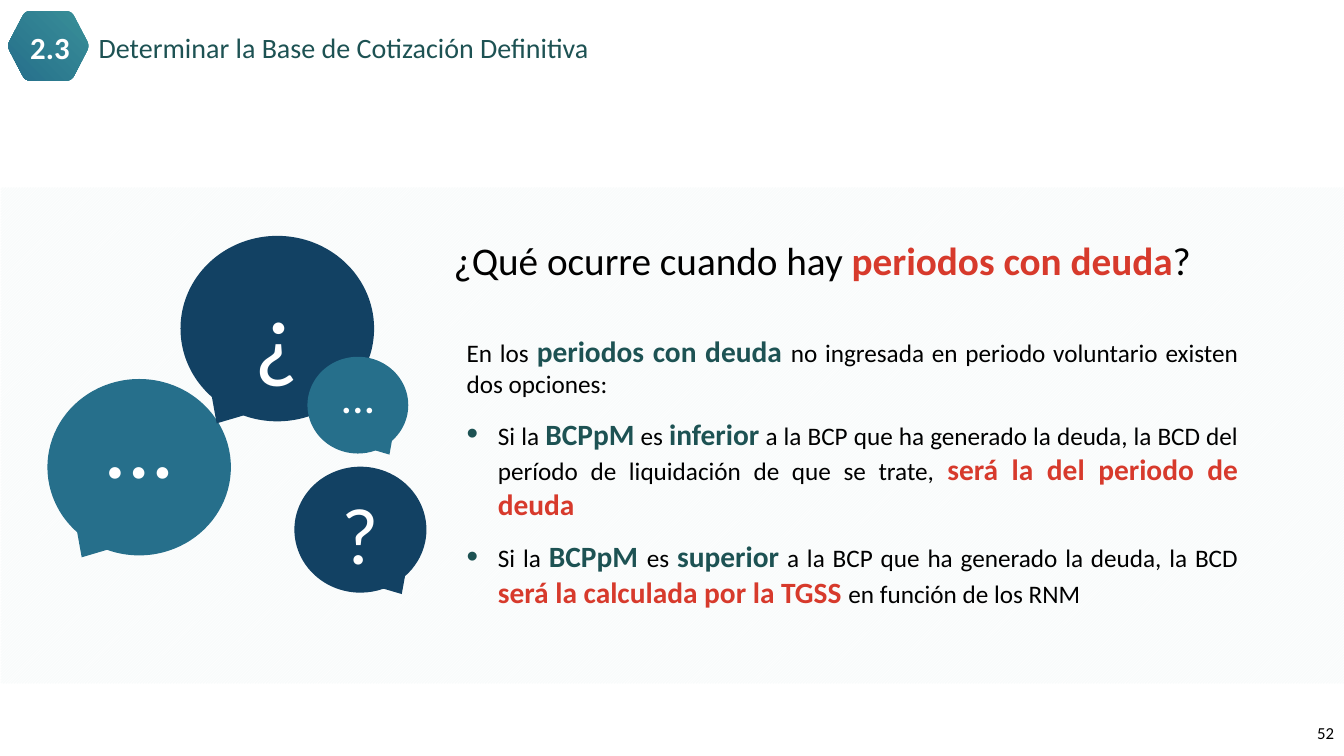
from lxml import etree
from pptx import Presentation
from pptx.dml.color import RGBColor
from pptx.enum.dml import MSO_PATTERN
from pptx.enum.shapes import MSO_SHAPE
from pptx.enum.text import MSO_ANCHOR, PP_ALIGN
from pptx.oxml.ns import qn
from pptx.util import Inches, Pt

BLACK = RGBColor(0x00, 0x00, 0x00)
WHITE = RGBColor(0xFF, 0xFF, 0xFF)
GREEN = RGBColor(0x1D, 0x52, 0x53)
RED = RGBColor(0xD7, 0x3A, 0x2C)
NAVY = RGBColor(0x12, 0x41, 0x63)
TEAL = RGBColor(0x26, 0x6F, 0x8B)
LIGHT_TEAL = RGBColor(0x39, 0x8F, 0x98)
STRIPE = RGBColor(0xE2, 0xED, 0xEE)

DEFAULT_MARGINS = (0.1, 0.05, 0.1, 0.05)
COLOURS = {"plain": BLACK, "key": GREEN, "alert": RED}


def set_frame(shape, margins=DEFAULT_MARGINS, anchor=MSO_ANCHOR.TOP):
    frame = shape.text_frame
    frame.word_wrap = True
    frame.vertical_anchor = anchor
    frame.margin_left, frame.margin_top, frame.margin_right, frame.margin_bottom = map(Inches, margins)
    return frame


def add_bullet(paragraph, indent=0.31):
    properties = paragraph._p.get_or_add_pPr()
    properties.set("marL", str(Inches(indent)))
    properties.set("indent", str(-Inches(indent)))
    colour = etree.SubElement(properties, qn("a:buClr"))
    etree.SubElement(colour, qn("a:srgbClr"), val=str(GREEN))
    etree.SubElement(properties, qn("a:buSzPct"), val="130000")
    etree.SubElement(properties, qn("a:buFont"), typeface="Arial")
    etree.SubElement(properties, qn("a:buChar"), char="•")


def write(paragraph, text, size=18, colour=BLACK, font="Calibri", bold=False,
          align=None, before=0, after=0, line=None):
    if align is not None:
        paragraph.alignment = align
    paragraph.space_before = Pt(before)
    paragraph.space_after = Pt(after)
    if line:
        paragraph.line_spacing = line
    run = paragraph.add_run()
    run.text = text
    run.font.name = font
    run.font.size = Pt(size)
    run.font.bold = bold
    run.font.color.rgb = colour


def write_mixed(paragraph, pieces, plain_size=18, strong_size=21, **layout):
    for text, style in pieces:
        strong = style != "plain"
        write(paragraph, text, size=strong_size if strong else plain_size,
              colour=COLOURS[style], bold=strong, align=PP_ALIGN.JUSTIFY, **layout)


def add_text_box(slide, box, **frame_format):
    return set_frame(slide.shapes.add_textbox(*map(Inches, box)), **frame_format)


def add_striped_band(slide):
    band = slide.shapes.add_shape(
        MSO_SHAPE.RECTANGLE, Inches(0.01), Inches(1.86), Inches(13.32), Inches(4.92))
    band.shadow.inherit = False
    band.line.fill.background()
    band.fill.patterned()
    band.fill.pattern = MSO_PATTERN.DARK_UPWARD_DIAGONAL
    band.fill.fore_color.rgb = STRIPE
    band.fill.back_color.rgb = WHITE
    for colour in band._element.spPr.find(qn("a:pattFill")).iter(qn("a:srgbClr")):
        etree.SubElement(colour, qn("a:alpha"), val="20000")


def add_bubble(slide, box, text, size, colour, tail, margins):
    bubble = slide.shapes.add_shape(MSO_SHAPE.OVAL_CALLOUT, *map(Inches, box))
    bubble.shadow.inherit = False
    bubble.adjustments[0] = tail
    bubble.adjustments[1] = 0.511
    bubble.fill.solid()
    bubble.fill.fore_color.rgb = colour
    bubble.line.fill.background()
    frame = set_frame(bubble, margins=margins, anchor=MSO_ANCHOR.MIDDLE)
    write(frame.paragraphs[0], text, size=size, colour=WHITE, font="Lato", align=PP_ALIGN.CENTER)


def round_corners(corners, cut=0.055, steps=6):
    points = []
    for index, (x, y) in enumerate(corners):
        ends = []
        for other_x, other_y in (corners[index - 1], corners[(index + 1) % len(corners)]):
            length = ((other_x - x) ** 2 + (other_y - y) ** 2) ** 0.5
            ends.append((x + (other_x - x) * cut / length, y + (other_y - y) * cut / length))
        (start_x, start_y), (end_x, end_y) = ends
        for step in range(steps + 1):
            t = step / steps
            weights = ((1 - t) ** 2, 2 * t * (1 - t), t ** 2)
            points.append((weights[0] * start_x + weights[1] * x + weights[2] * end_x,
                           weights[0] * start_y + weights[1] * y + weights[2] * end_y))
    return points


def add_hexagon(slide):
    corners = [(0.25, 0.11), (0.71, 0.11), (0.89, 0.455), (0.71, 0.8), (0.25, 0.8), (0.07, 0.455)]
    points = [(Inches(x), Inches(y)) for x, y in round_corners(corners)]
    builder = slide.shapes.build_freeform(*points[0])
    builder.add_line_segments(points[1:], close=True)
    hexagon = builder.convert_to_shape()
    hexagon.shadow.inherit = False
    hexagon.line.fill.background()
    hexagon.fill.gradient()
    for stop, position, colour in zip(hexagon.fill.gradient_stops, (0, 1), (TEAL, LIGHT_TEAL)):
        stop.position = position
        stop.color.rgb = colour
    gradient = hexagon._element.spPr.find(qn("a:gradFill"))
    gradient.remove(gradient.find(qn("a:lin")))
    circle = etree.SubElement(gradient, qn("a:path"), {"path": "circle"})
    etree.SubElement(circle, qn("a:fillToRect"), t="100000", r="100000")


def add_header(slide):
    title = add_text_box(slide, (0.88, 0.3, 11.58, 0.39))
    write(title.paragraphs[0], "Determinar la Base de Cotización Definitiva",
          size=20, colour=GREEN, after=6, line=0.85)
    add_hexagon(slide)
    number = add_text_box(slide, (0.17, 0.35, 0.65, 0.3),
                          margins=(0.1, 0, 0.1, 0), anchor=MSO_ANCHOR.MIDDLE)
    write(number.paragraphs[0], "2.3", size=22, colour=WHITE, bold=True,
          align=PP_ALIGN.CENTER, line=0.8)


def add_question(slide):
    frame = add_text_box(slide, (4.5, 2.34, 7.6, 0.47), margins=(0, 0, 0, 0))
    pieces = [("¿Qué ocurre cuando hay ", "plain"), ("periodos con deuda", "alert"), ("?", "plain")]
    write_mixed(frame.paragraphs[0], pieces, plain_size=28, strong_size=28, after=6)


def add_answer(slide):
    frame = add_text_box(slide, (4.53, 3.26, 7.85, 2.86))
    introduction = [
        ("En los ", "plain"), ("periodos con deuda ", "key"),
        ("no ingresada en periodo voluntario existen dos opciones:", "plain")]
    options = [
        [("Si la ", "plain"), ("BCPpM", "key"), (" es ", "plain"), ("inferior", "key"),
         (" a la BCP que ha generado la deuda, la BCD del período de liquidación de que se trate, ", "plain"),
         ("será la del periodo de deuda", "alert")],
        [("Si la ", "plain"), ("BCPpM ", "key"), ("es ", "plain"), ("superior", "key"),
         (" a la BCP que ha generado la deuda, la BCD ", "plain"),
         ("será la calculada por la TGSS ", "alert"), ("en función de los RNM", "plain")]]
    write_mixed(frame.paragraphs[0], introduction, after=6)
    for option in options:
        paragraph = frame.add_paragraph()
        add_bullet(paragraph)
        write_mixed(paragraph, option, before=6, after=6)


def main():
    presentation = Presentation()
    presentation.slide_width = Inches(13.33)
    presentation.slide_height = Inches(7.5)
    slide = presentation.slides.add_slide(presentation.slide_layouts[6])
    add_striped_band(slide)
    page = add_text_box(slide, (10.33, 7.07, 3, 0.4), anchor=MSO_ANCHOR.MIDDLE)
    write(page.paragraphs[0], "52", size=12, align=PP_ALIGN.RIGHT)
    add_answer(slide)
    bubbles = [
        ((2.92, 4.63, 1.31, 1.25), "?", 54, NAVY, 0.313, (0.1, 0.2, 0.1, 0.1)),
        ((0.47, 3.76, 1.82, 1.75), "…", 66, TEAL, -0.313, (0, 0, 0, 0.5)),
        ((1.79, 2.34, 1.92, 1.84), "¿", 66, NAVY, -0.313, (0.1, 0.1, 0.1, 0)),
        ((3.05, 3.54, 1, 0.96), "…", 32, TEAL, 0.313, (0.1, 0, 0.1, 0.2))]
    for bubble in bubbles:
        add_bubble(slide, *bubble)
    add_question(slide)
    add_header(slide)
    presentation.save("out.pptx")


if __name__ == "__main__":
    main()
